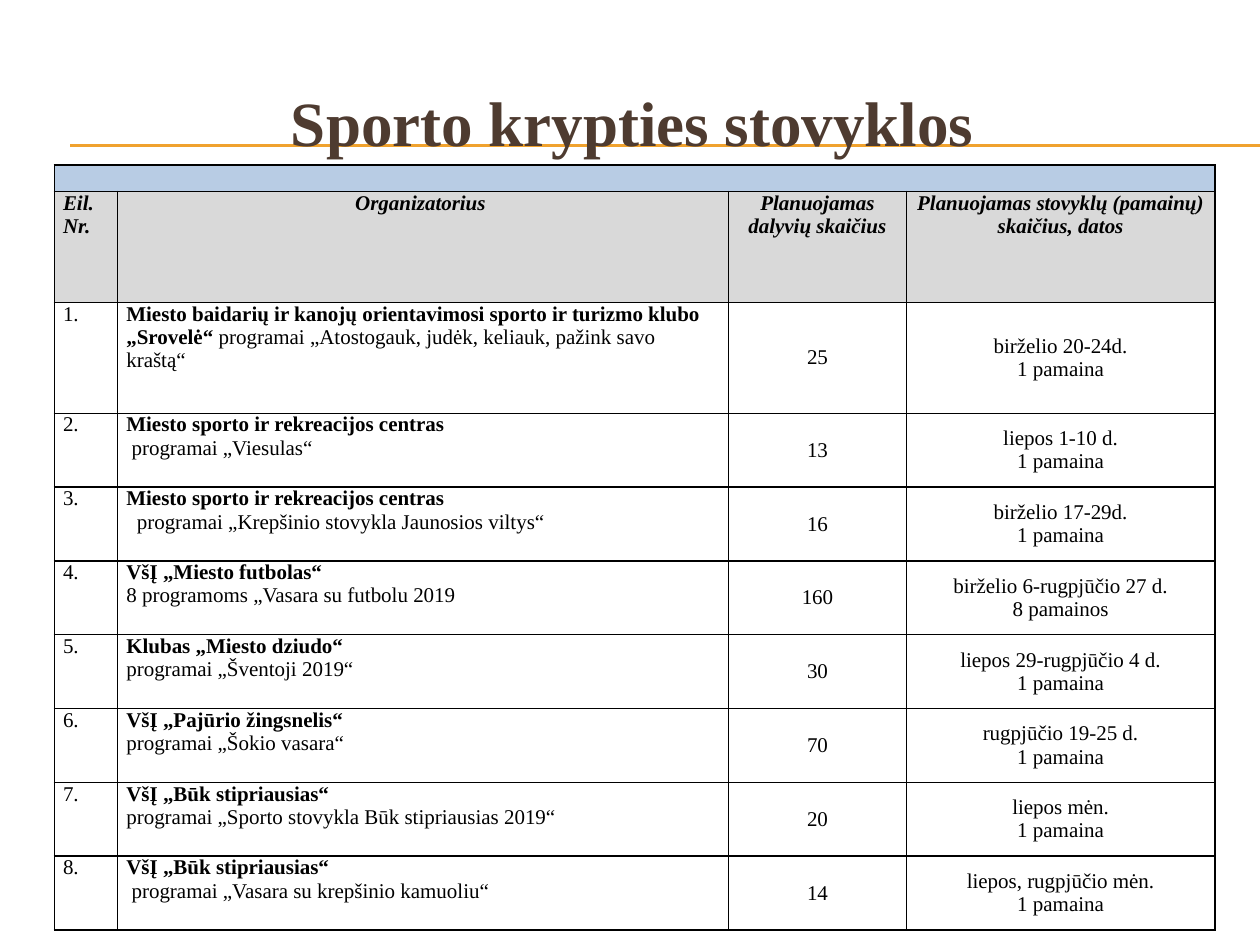
from lxml import etree
from pptx import Presentation
from pptx import util as u
from pptx.dml.color import RGBColor
from pptx.enum import shapes, text
from pptx.oxml import ns

BLACK = RGBColor(0x00, 0x00, 0x00)
WHITE = RGBColor(0xFF, 0xFF, 0xFF)
BROWN = RGBColor(0x4E, 0x3B, 0x30)
GOLD = RGBColor(0xF0, 0xA2, 0x2E)
BLUE = RGBColor(0xB8, 0xCC, 0xE4)
GREY = RGBColor(0xD9, 0xD9, 0xD9)
MID = text.PP_ALIGN.CENTER
LEFT = text.PP_ALIGN.LEFT

HEADS = ["Eil. Nr.", "Organizatorius ", "Planuojamas dalyvių skaičius",
         "Planuojamas stovyklų (pamainų) skaičius, datos"]
CAMPS = [
    ("Miesto baidarių ir kanojų orientavimosi sporto ir turizmo klubo „Srovelė“",
     " programai „Atostogauk, judėk, keliauk, pažink savo kraštą“",
     0, "25", "birželio 20-24d.\n1 pamaina"),
    ("Miesto sporto ir rekreacijos centras", "programai „Viesulas“",
     3, "13", "liepos 1-10 d.\n1 pamaina"),
    ("Miesto sporto ir rekreacijos centras",
     "programai „Krepšinio stovykla Jaunosios viltys“",
     6, "16", "birželio 17-29d.\n1 pamaina"),
    ("VšĮ „Miesto futbolas“", "8 programoms „Vasara su futbolu 2019",
     0, "160", "birželio 6-rugpjūčio 27 d.\n8 pamainos"),
    ("Klubas „Miesto dziudo“", "programai „Šventoji 2019“",
     0, "30", "liepos 29-rugpjūčio 4 d.\n1 pamaina"),
    ("VšĮ „Pajūrio žingsnelis“", "programai „Šokio vasara“",
     0, "70", "rugpjūčio 19-25 d.\n1 pamaina"),
    ("VšĮ „Būk stipriausias“", "programai „Sporto stovykla Būk stipriausias 2019“",
     0, "20", "liepos mėn.\n1 pamaina"),
    ("VšĮ „Būk stipriausias“", "programai „Vasara su krepšinio kamuoliu“",
     3, "14", "liepos, rugpjūčio mėn.\n1 pamaina"),
]


class Deck:
    face = "Times New Roman"
    size = 12

    def __init__(self, wide, high):
        self.show = Presentation()
        self.show.slide_width, self.show.slide_height = u.Pt(wide), u.Pt(high)
        self.slide = self.show.slides.add_slide(self.show.slide_layouts[6])

    def style(self, run, size, color=BLACK, bold=False, slant=False):
        font = run.font
        font.name, font.size = self.face, u.Pt(size)
        font.bold, font.italic = bold, slant
        font.color.rgb = color

    def rule(self, left, right, top):
        line = self.slide.shapes.add_connector(
            shapes.MSO_CONNECTOR.STRAIGHT, u.Pt(left), u.Pt(top), u.Pt(right), u.Pt(top))
        line.line.color.rgb = GOLD
        line.line.width = u.Pt(0.75)
        etree.SubElement(line._element.spPr, ns.qn("a:effectLst"))

    def title(self, words, left, top, wide, high):
        frame = self.slide.shapes.add_textbox(
            u.Pt(left), u.Pt(top), u.Pt(wide), u.Pt(high)).text_frame
        frame.word_wrap = True
        frame.vertical_anchor = text.MSO_ANCHOR.MIDDLE
        frame.text = words
        frame.paragraphs[0].alignment = MID
        self.style(frame.paragraphs[0].runs[0], 36, BROWN, bold=True)

    def table(self, left, top, cols, rows):
        grid = self.slide.shapes.add_table(
            len(rows), len(cols), u.Pt(left), u.Pt(top),
            u.Pt(sum(cols)), u.Pt(sum(rows))).table
        for col, wide in zip(grid.columns, cols):
            col.width = u.Pt(wide)
        for row, high in zip(grid.rows, rows):
            row.height = u.Pt(high)
        return grid

    def border(self, cell):
        props = cell._tc.get_or_add_tcPr()
        for spot, side in enumerate(("lnL", "lnR", "lnT", "lnB")):
            edge = etree.Element(ns.qn(f"a:{side}"), w=str(u.Pt(1)))
            fill = etree.SubElement(edge, ns.qn("a:solidFill"))
            etree.SubElement(fill, ns.qn("a:srgbClr"), val=str(BLACK))
            props.insert(spot, edge)

    def cell(self, cell, words, fill, align=LEFT, bold=False, slant=False, mid=False):
        cell.margin_left = cell.margin_right = u.Pt(5)
        cell.margin_top = cell.margin_bottom = 0
        cell.vertical_anchor = text.MSO_ANCHOR.MIDDLE if mid else text.MSO_ANCHOR.TOP
        cell.fill.solid()
        cell.fill.fore_color.rgb = fill
        self.border(cell)
        cell.text_frame.text = words
        for para in cell.text_frame.paragraphs:
            para.alignment = align
            for run in para.runs:
                self.style(run, self.size, bold=bold, slant=slant)
            if not para.runs:
                etree.SubElement(para._p, ns.qn("a:endParaRPr"), sz=str(self.size * 100))

    def group(self, cell, name, plan, indent, same):
        self.cell(cell, name, WHITE, bold=True)
        frame = cell.text_frame
        para = frame.paragraphs[0] if same else frame.add_paragraph()
        run = para.add_run()
        run.text = plan
        self.style(run, self.size)
        if indent:
            para._p.get_or_add_pPr().set("marL", str(u.Pt(indent)))


def main():
    deck = Deck(720, 540)
    for top in (82.8, 83.5):
        deck.rule(40.3, 720, top)
    deck.title("Sporto krypties stovyklos ", 23.8, 36, 684, 66.2)

    rows = [15.1, 63.4, 63.4] + [42.2] * 7
    grid = deck.table(31, 94.3, [36.2, 349.2, 101.5, 176.4], rows)
    for spot, head in enumerate(HEADS):
        deck.cell(grid.cell(0, spot), "", BLUE)
        deck.cell(grid.cell(1, spot), head, GREY, MID if spot else LEFT,
                  bold=True, slant=True)
    grid.cell(0, 0).merge(grid.cell(0, 3))

    for num, (name, plan, indent, count, dates) in enumerate(CAMPS, 1):
        row = num + 1
        deck.cell(grid.cell(row, 0), f"{num}.", WHITE)
        deck.group(grid.cell(row, 1), name, plan, indent, same=num == 1)
        deck.cell(grid.cell(row, 2), count, WHITE, MID, mid=True)
        deck.cell(grid.cell(row, 3), dates, WHITE, MID, mid=True)

    deck.show.save("out.pptx")


if __name__ == "__main__":
    main()
